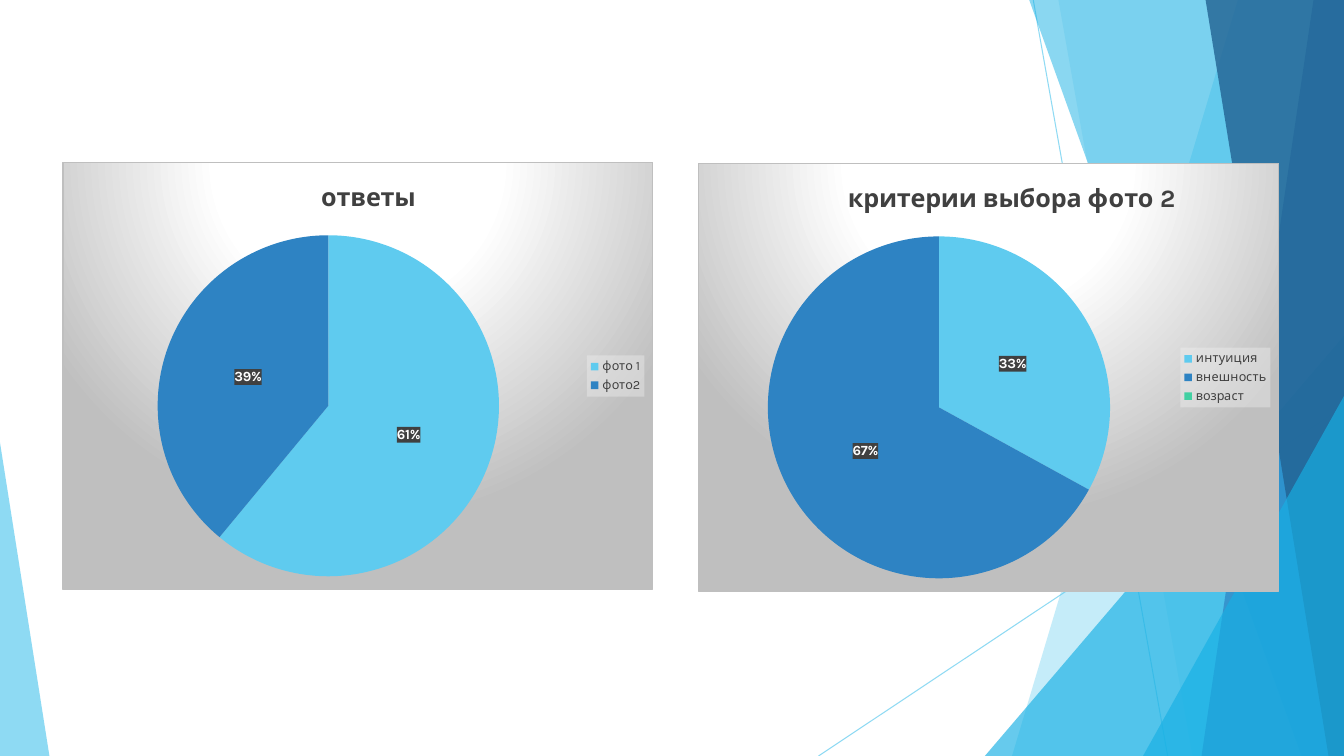
from dataclasses import dataclass

from lxml.etree import SubElement
from pptx import Presentation
from pptx.chart.data import CategoryChartData
from pptx.dml.color import RGBColor
from pptx.enum.chart import XL_CHART_TYPE as ChartType
from pptx.enum.chart import XL_LABEL_POSITION as LabelPosition
from pptx.enum.chart import XL_LEGEND_POSITION as LegendPosition
from pptx.enum.shapes import MSO_CONNECTOR as Connector
from pptx.enum.shapes import MSO_SHAPE as Preset
from pptx.oxml import parse_xml
from pptx.oxml.ns import nsdecls, qn
from pptx.util import Inches, Pt

SLIDE_WIDTH, SLIDE_HEIGHT = Inches(13.33), Inches(7.5)

SKY = RGBColor(0x5F, 0xCB, 0xEF)
AZURE = RGBColor(0x17, 0xB0, 0xE4)
BLUE = RGBColor(0x2E, 0x83, 0xC3)
NAVY = RGBColor(0x22, 0x62, 0x92)
GREEN = RGBColor(0x42, 0xD0, 0xA2)
BLACK = RGBColor(0, 0, 0)
CHARCOAL = RGBColor(0x40, 0x40, 0x40)
SILVER = RGBColor(0xBF, 0xBF, 0xBF)
PALE = RGBColor(0xF2, 0xF2, 0xF2)
WHITE = RGBColor(0xFF, 0xFF, 0xFF)

SLICE_COLORS = (SKY, BLUE, GREEN)
BODY_FONT = {"name": "Karla", "size": Pt(10), "color": BLACK}
LEGEND_FONT = BODY_FONT | {"size": Pt(9), "color": CHARCOAL}
TITLE_FONT = BODY_FONT | {"size": Pt(18), "bold": True, "color": CHARCOAL}
LABEL_FONT = BODY_FONT | {"bold": True, "color": WHITE}
LABEL_FORMAT = {
    "show_percentage": True,
    "show_value": False,
    "number_format": "0%",
    "number_format_is_linked": False,
    "position": LabelPosition.CENTER,
}


# Positions and sizes are percentages of the slide's width and height.
@dataclass(frozen=True)
class Ray:
    start: tuple[float, float]
    end: tuple[float, float]


@dataclass(frozen=True)
class Band:
    """Full-height area from a slanted left edge to the slide's right side."""
    top: float
    bottom: float
    color: RGBColor
    opacity: int


@dataclass(frozen=True)
class Wedge:
    """Triangle standing on the slide's bottom edge."""
    left: float
    top: float
    width: float
    apex: int
    color: RGBColor
    opacity: int


@dataclass(frozen=True)
class Pie:
    """Poll result; title and plot places are shares of the chart's frame."""
    title: str
    answers: dict[str, int | None]
    frame: tuple[float, float, float, float]
    title_place: tuple[float, float]
    plot_place: tuple[float, float, float, float]


RAYS = (Ray((76.88, 0), (86.88, 100)), Ray((100, 53.73), (60.9, 100)))
FACETS = (
    Band(92.1, 75.3, SKY, 36),
    Band(78.75, 88.73, SKY, 20),
    Wedge(73.28, 44.4, 26.72, 1, AZURE, 66),
    Band(76.58, 96.83, AZURE, 50),
    Band(97.73, 89.4, BLUE, 70),
    Band(89.7, 98.85, NAVY, 80),
    Wedge(85.05, 52.4, 14.95, 1, AZURE, 66),
    Wedge(0, 58.53, 3.68, 0, SKY, 70),
)
PIES = (
    Pie("ответы", {"фото 1": 61, "фото2": 39},
        (4.65, 21.47, 43.95, 56.53), (0.43, 0.03), (0.16, 0.17, 0.58, 0.8)),
    Pie("критерии выбора фото 2",
        {"интуиция": 33, "внешность": 67, "возраст": None},
        (51.9, 21.6, 43.28, 56.67), (0.25, 0.03), (0.12, 0.17, 0.59, 0.8)),
)


def across(percent: float) -> int:
    return round(SLIDE_WIDTH * percent / 100)


def down(percent: float) -> int:
    return round(SLIDE_HEIGHT * percent / 100)


def set_opacity(element, opacity: int) -> None:
    color = element.find(".//" + qn("a:srgbClr"))
    SubElement(color, qn("a:alpha"), val=str(opacity * 1000))


def draw_ray(slide, ray: Ray) -> None:
    (x1, y1), (x2, y2) = ray.start, ray.end
    line = slide.shapes.add_connector(
        Connector.STRAIGHT, across(x1), down(y1), across(x2), down(y2))
    line.line.color.rgb = SKY
    line.line.width = Pt(0.75)
    set_opacity(line.element, 70)
    SubElement(line.element.spPr, qn("a:effectLst"))


def draw_facet(slide, facet: Band | Wedge) -> None:
    if isinstance(facet, Band):
        builder = slide.shapes.build_freeform(across(facet.top), 0)
        builder.add_line_segments(
            [(across(100), 0), (across(100), down(100)),
             (across(facet.bottom), down(100))])
        shape = builder.convert_to_shape()
    else:
        shape = slide.shapes.add_shape(
            Preset.ISOSCELES_TRIANGLE, across(facet.left), down(facet.top),
            across(facet.width), down(100 - facet.top))
        shape.adjustments[0] = facet.apex
    shape.shadow.inherit = False
    shape.line.fill.background()
    shape.fill.solid()
    shape.fill.fore_color.rgb = facet.color
    set_opacity(shape.element, facet.opacity)


def apply_font(font, values: dict) -> None:
    for key, value in values.items():
        if key == "color":
            font.color.rgb = value
        else:
            setattr(font, key, value)


def place(element, index: int, shares: tuple[float, ...]) -> None:
    """Give a chart part a manual layout as its child number index."""
    for old in element.findall(qn("c:layout")):
        element.remove(old)
    layout = parse_xml(f"<c:layout {nsdecls('c')}/>")
    manual = SubElement(layout, qn("c:manualLayout"))
    if len(shares) == 4:
        SubElement(manual, qn("c:layoutTarget"), val="inner")
    for mode in ("xMode", "yMode"):
        SubElement(manual, qn(f"c:{mode}"), val="edge")
    for key, share in zip("xywh", shares):
        SubElement(manual, qn(f"c:{key}"), val=str(share))
    element.insert(index, layout)


def translucent_panel(color: RGBColor, opacity: int):
    panel = parse_xml(
        f"<c:spPr {nsdecls('c', 'a')}><a:solidFill>"
        f'<a:srgbClr val="{color}"/></a:solidFill></c:spPr>')
    set_opacity(panel, opacity)
    return panel


def spotlight_panel():
    stops = "".join(
        f'<a:gs pos="{pos * 1000}"><a:srgbClr val="{color}"/></a:gs>'
        for pos, color in ((0, WHITE), (39, WHITE), (100, SILVER)))
    return parse_xml(
        f"<c:spPr {nsdecls('c', 'a')}><a:gradFill><a:gsLst>{stops}</a:gsLst>"
        '<a:path path="circle"><a:fillToRect l="50000" t="-80000" r="50000" '
        'b="180000"/></a:path></a:gradFill><a:ln w="9525"><a:solidFill>'
        f'<a:srgbClr val="{SILVER}"/></a:solidFill></a:ln></c:spPr>')


def draw_pie(slide, pie: Pie) -> None:
    data = CategoryChartData()
    data.categories = list(pie.answers)
    data.add_series(pie.title, list(pie.answers.values()))
    left, top, width, height = pie.frame
    chart = slide.shapes.add_chart(
        ChartType.PIE, across(left), down(top), across(width), down(height),
        data).chart
    apply_font(chart.font, BODY_FONT)

    chart.has_title = True
    heading = chart.chart_title.text_frame
    heading.text = pie.title
    apply_font(heading.paragraphs[0].runs[0].font, TITLE_FONT)

    chart.has_legend = True
    chart.legend.position = LegendPosition.RIGHT
    chart.legend.include_in_layout = False
    apply_font(chart.legend.font, LEGEND_FONT)

    answers = chart.plots[0].series[0]
    for index, color in enumerate(SLICE_COLORS[:len(pie.answers)]):
        slice_format = answers.points[index].format
        slice_format.fill.solid()
        slice_format.fill.fore_color.rgb = color
        slice_format.line.fill.background()
    apply_font(answers.data_labels.font, LABEL_FONT)
    for key, value in LABEL_FORMAT.items():
        setattr(answers.data_labels, key, value)

    def part(tag: str):
        return chart.element.find(".//" + qn(tag))

    place(part("c:title"), 1, pie.title_place)
    place(part("c:plotArea"), 0, pie.plot_place)
    part("c:chart").addnext(spotlight_panel())
    part("c:legend").find(qn("c:txPr")).addprevious(translucent_panel(PALE, 39))
    part("c:dLbls").find(qn("c:txPr")).addprevious(translucent_panel(CHARCOAL, 90))


def main() -> None:
    deck = Presentation()
    deck.slide_width, deck.slide_height = SLIDE_WIDTH, SLIDE_HEIGHT
    slide = deck.slides.add_slide(deck.slide_layouts[6])
    for ray in RAYS:
        draw_ray(slide, ray)
    for facet in FACETS:
        draw_facet(slide, facet)
    for pie in PIES:
        draw_pie(slide, pie)
    deck.save("out.pptx")


if __name__ == "__main__":
    main()
